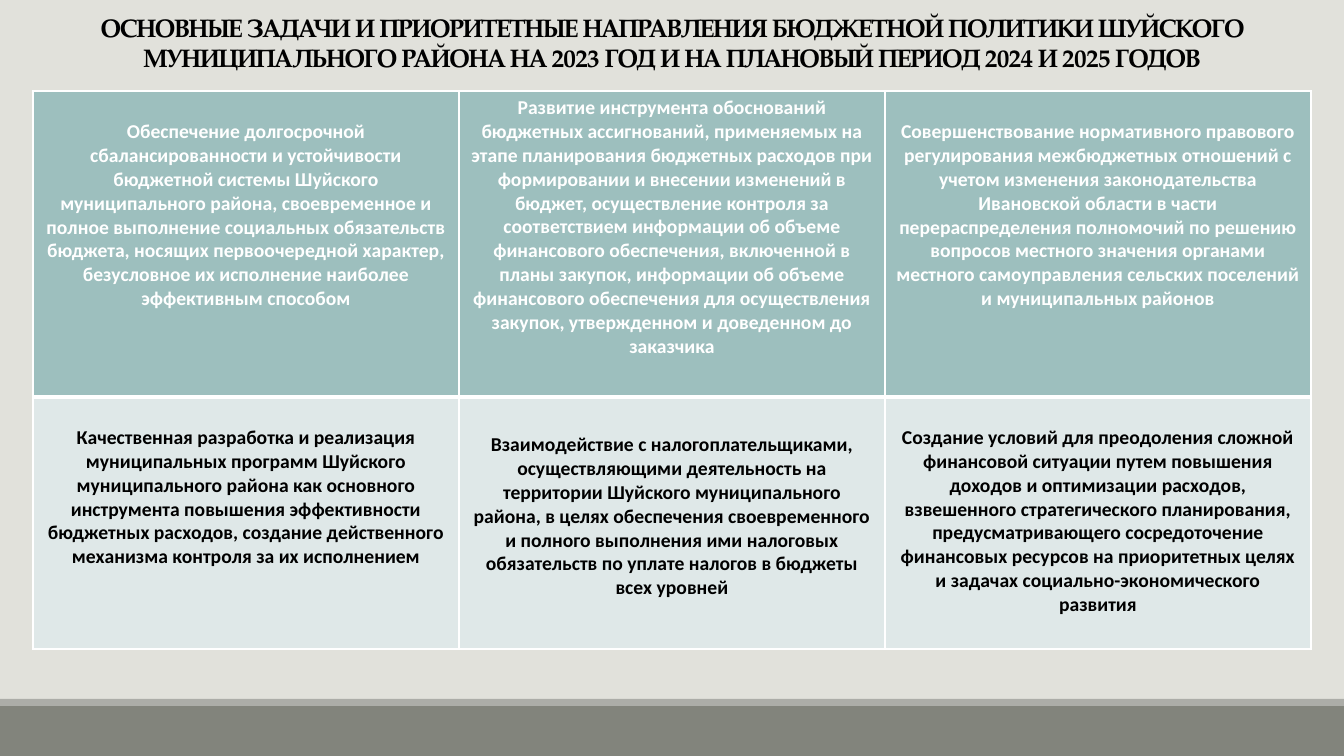
from dataclasses import dataclass

import lxml.etree
import pptx
import pptx.dml.color
import pptx.enum.shapes
import pptx.enum.text
import pptx.oxml.ns
import pptx.util

RGBColor = pptx.dml.color.RGBColor
SLIDE_WIDTH, SLIDE_HEIGHT = 1344, 756
EMU_PER_PX = 12192000 / SLIDE_WIDTH

BACKGROUND = RGBColor(0xE1, 0xE1, 0xDB)
FOOTER_DARK = RGBColor(0x82, 0x84, 0x7C)
FOOTER_LIGHT = RGBColor(0xAC, 0xAD, 0xA8)
TEAL = RGBColor(0x9D, 0xBF, 0xBE)
PALE_TEAL = RGBColor(0xDF, 0xE8, 0xE8)
WHITE = RGBColor(0xFF, 0xFF, 0xFF)
BLACK = RGBColor(0x00, 0x00, 0x00)

TITLE = (
    "ОСНОВНЫЕ ЗАДАЧИ И ПРИОРИТЕТНЫЕ НАПРАВЛЕНИЯ БЮДЖЕТНОЙ ПОЛИТИКИ ШУЙСКОГО "
    "МУНИЦИПАЛЬНОГО РАЙОНА НА 2023 ГОД И НА ПЛАНОВЫЙ ПЕРИОД 2024 И 2025 ГОДОВ"
)


@dataclass(frozen=True)
class Band:
    top: int
    height: int
    color: RGBColor


@dataclass(frozen=True)
class Task:
    text: str
    top_margin: int


@dataclass(frozen=True)
class TaskRow:
    height: int
    fill: RGBColor
    text_color: RGBColor
    border_points: dict[str, int]
    tasks: list[Task]


FOOTER_BANDS = [Band(706, 50, FOOTER_DARK), Band(699, 7, FOOTER_LIGHT)]
TABLE_LEFT, TABLE_TOP, COLUMN_WIDTH = 33, 91, 426
TASK_ROWS = [
    TaskRow(306, TEAL, WHITE, {"lnL": 1, "lnR": 1, "lnT": 1, "lnB": 3}, [
        Task("Обеспечение долгосрочной сбалансированности и устойчивости бюджетной "
             "системы Шуйского муниципального района, своевременное и полное выполнение "
             "социальных обязательств бюджета, носящих первоочередной характер, "
             "безусловное их исполнение наиболее эффективным способом", 29),
        Task("Развитие инструмента обоснований бюджетных ассигнований, применяемых на "
             "этапе планирования бюджетных расходов при формировании и внесении "
             "изменений в бюджет, осуществление контроля за соответствием информации об "
             "объеме финансового обеспечения, включенной в планы закупок, информации об "
             "объеме финансового обеспечения для осуществления закупок, утвержденном и "
             "доведенном до заказчика", 5),
        Task("Совершенствование нормативного правового регулирования межбюджетных "
             "отношений с учетом изменения законодательства Ивановской области в части "
             "перераспределения полномочий по решению вопросов местного значения "
             "органами местного самоуправления сельских поселений и муниципальных "
             "районов", 29),
    ]),
    TaskRow(252, PALE_TEAL, BLACK, {"lnL": 1, "lnR": 1, "lnT": 3, "lnB": 1}, [
        Task("Качественная разработка и реализация муниципальных программ Шуйского "
             "муниципального района как основного инструмента повышения эффективности "
             "бюджетных расходов, создание действенного механизма контроля за их "
             "исполнением", 29),
        Task("Взаимодействие с налогоплательщиками, осуществляющими деятельность на "
             "территории Шуйского муниципального района, в целях обеспечения "
             "своевременного и полного выполнения ими налоговых обязательств по уплате "
             "налогов в бюджеты всех уровней", 36),
        Task("Создание условий для преодоления сложной финансовой ситуации путем "
             "повышения доходов и оптимизации расходов, взвешенного стратегического "
             "планирования, предусматривающего сосредоточение финансовых ресурсов на "
             "приоритетных целях и задачах социально-экономического развития", 29),
    ]),
]


def px(length: int) -> pptx.util.Emu:
    return pptx.util.Emu(round(length * EMU_PER_PX))


def write_centered(frame, text: str, font_name: str, size: int, color: RGBColor) -> None:
    frame.word_wrap = True
    frame.text = text
    paragraph = frame.paragraphs[0]
    paragraph.alignment = pptx.enum.text.PP_ALIGN.CENTER
    font = paragraph.runs[0].font
    font.name, font.size, font.bold = font_name, pptx.util.Pt(size), True
    font.color.rgb = color


def add_band(slide, band: Band) -> None:
    strip = slide.shapes.add_shape(
        pptx.enum.shapes.MSO_SHAPE.RECTANGLE,
        0, px(band.top), px(SLIDE_WIDTH), px(band.height))
    strip.shadow.inherit = False
    strip.fill.solid()
    strip.fill.fore_color.rgb = band.color
    strip.line.fill.background()


def add_title(slide) -> None:
    title = slide.shapes.add_textbox(px(10), px(7), px(1324), px(72))
    write_centered(title.text_frame, TITLE, "TeX Gyre Pagella", 18, BLACK)
    # Letter spacing in hundredths of a point
    title.text_frame.paragraphs[0].runs[0].font._element.set("spc", "-50")


def set_borders(cell, border_points: dict[str, int]) -> None:
    """Put white lines before the fill, where the schema expects them."""
    properties = cell._tc.get_or_add_tcPr()
    for position, (side, points) in enumerate(border_points.items()):
        line = lxml.etree.Element(
            pptx.oxml.ns.qn(f"a:{side}"), w=str(pptx.util.Pt(points)))
        solid = lxml.etree.SubElement(line, pptx.oxml.ns.qn("a:solidFill"))
        lxml.etree.SubElement(solid, pptx.oxml.ns.qn("a:srgbClr"), val=str(WHITE))
        properties.insert(position, line)


def add_task_table(slide) -> None:
    column_count = len(TASK_ROWS[0].tasks)
    table = slide.shapes.add_table(
        len(TASK_ROWS), column_count, px(TABLE_LEFT), px(TABLE_TOP),
        px(column_count * COLUMN_WIDTH), px(sum(row.height for row in TASK_ROWS))).table
    table.first_row = table.horz_banding = False
    for column in table.columns:
        column.width = px(COLUMN_WIDTH)
    for row_index, row in enumerate(TASK_ROWS):
        table.rows[row_index].height = px(row.height)
        for column_index, task in enumerate(row.tasks):
            cell = table.cell(row_index, column_index)
            write_centered(cell.text_frame, task.text, "Calibri", 14, row.text_color)
            cell.margin_top = px(task.top_margin)
            cell.fill.solid()
            cell.fill.fore_color.rgb = row.fill
            set_borders(cell, row.border_points)


def main() -> None:
    deck = pptx.Presentation()
    deck.slide_width, deck.slide_height = px(SLIDE_WIDTH), px(SLIDE_HEIGHT)
    slide = deck.slides.add_slide(deck.slide_layouts[6])
    slide.background.fill.solid()
    slide.background.fill.fore_color.rgb = BACKGROUND
    for band in FOOTER_BANDS:
        add_band(slide, band)
    add_title(slide)
    add_task_table(slide)
    deck.save("out.pptx")


if __name__ == "__main__":
    main()
